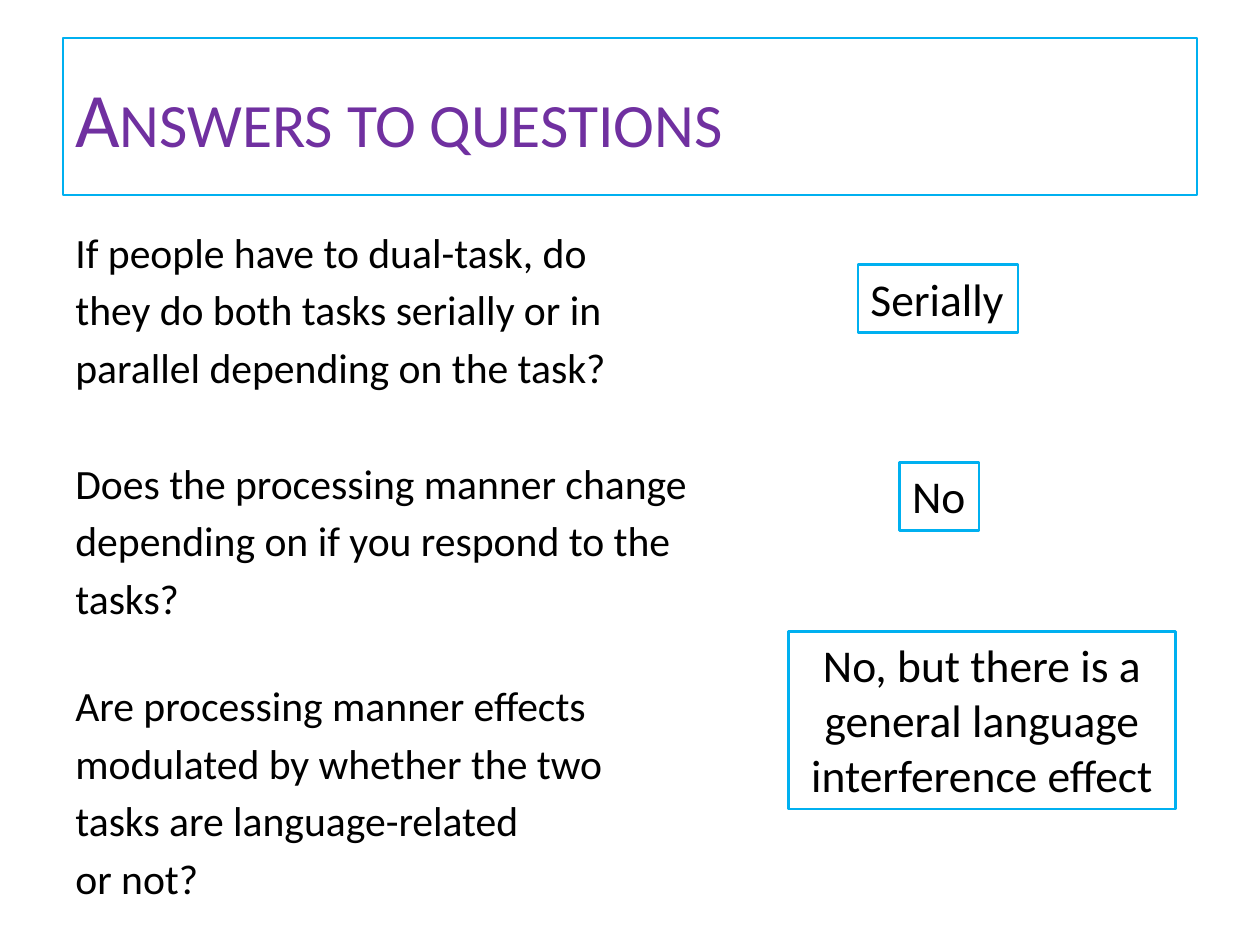
from dataclasses import dataclass

from pptx import Presentation
from pptx.dml.color import RGBColor
from pptx.enum.shapes import MSO_SHAPE
from pptx.enum.text import MSO_ANCHOR, MSO_AUTO_SIZE, PP_ALIGN
from pptx.util import Pt

COLORS = {"title": "7030A0", "text": "000000", "border": "00B0F0"}
FONT = "Calibri"
LINE_GAP = 4.3


@dataclass(frozen=True)
class Box:
    left: float
    top: float
    width: float
    height: float


@dataclass(frozen=True)
class Question:
    lines: tuple[str, ...]
    gap: float


@dataclass(frozen=True)
class Answer:
    text: str
    box: Box
    wrap: bool = False
    alignment: PP_ALIGN = PP_ALIGN.LEFT


TITLE_BOX = Box(36, 21.6, 648, 90)
QUESTIONS_BOX = Box(36, 126, 647.3, 356.4)

QUESTIONS = (
    Question((
        "If people have to dual-task, do",
        "they do both tasks serially or in",
        "parallel depending on the task?",
    ), LINE_GAP),
    Question((
        "Does the processing manner change",
        "depending on if you respond to the",
        "tasks?",
    ), 37.6),
    Question((
        "Are processing manner effects",
        "modulated by whether the two",
        "tasks are language-related",
        "or not?",
    ), 32.7),
)

ANSWERS = (
    Answer("Serially", Box(490.3, 151.2, 91.4, 38.9)),
    Answer("No", Box(514.1, 264.2, 45.4, 38.9)),
    Answer("No, but there is a general language interference effect",
           Box(450.7, 360.7, 221, 101.5), True, PP_ALIGN.CENTER),
)


def write_text(paragraph, text: str, *, size: float, color: str = "text",
               alignment: PP_ALIGN = PP_ALIGN.LEFT, space_before: float = 0,
               small_caps: bool = False) -> None:
    paragraph.alignment = alignment
    paragraph.space_before = Pt(space_before)
    run = paragraph.add_run()
    run.text = text
    run.font.name = FONT
    run.font.size = Pt(size)
    run.font.color.rgb = RGBColor.from_string(COLORS[color])
    if small_caps:
        run._r.get_or_add_rPr().set("cap", "small")


def add_frame(slide, box: Box, line_width: float):
    shape = slide.shapes.add_shape(
        MSO_SHAPE.RECTANGLE, Pt(box.left), Pt(box.top), Pt(box.width), Pt(box.height))
    shape.shadow.inherit = False
    shape.fill.background()
    shape.line.color.rgb = RGBColor.from_string(COLORS["border"])
    shape.line.width = Pt(line_width)
    shape.text_frame.word_wrap = True
    shape.text_frame.vertical_anchor = MSO_ANCHOR.MIDDLE
    return shape


def add_title(slide, text: str) -> None:
    shape = add_frame(slide, TITLE_BOX, 1)
    write_text(shape.text_frame.paragraphs[0], text, size=44, color="title", small_caps=True)


def add_questions(slide, questions: tuple[Question, ...]) -> None:
    box = QUESTIONS_BOX
    shape = slide.shapes.add_textbox(
        Pt(box.left), Pt(box.top), Pt(box.width), Pt(box.height))
    text_frame = shape.text_frame
    text_frame.word_wrap = True
    paragraph = text_frame.paragraphs[0]
    for question in questions:
        for index, line in enumerate(question.lines):
            if paragraph.runs:
                paragraph = text_frame.add_paragraph()
            gap = LINE_GAP if index else question.gap
            write_text(paragraph, line, size=23.8, space_before=gap)


def add_answer(slide, answer: Answer) -> None:
    text_frame = add_frame(slide, answer.box, 1.5).text_frame
    text_frame.word_wrap = answer.wrap
    text_frame.auto_size = MSO_AUTO_SIZE.SHAPE_TO_FIT_TEXT
    text_frame.vertical_anchor = MSO_ANCHOR.TOP
    write_text(text_frame.paragraphs[0], answer.text, size=26, alignment=answer.alignment)


def main() -> None:
    presentation = Presentation()
    presentation.slide_width = Pt(720)
    presentation.slide_height = Pt(540)
    slide = presentation.slides.add_slide(presentation.slide_layouts[6])
    add_title(slide, "Answers to questions")
    add_questions(slide, QUESTIONS)
    for answer in ANSWERS:
        add_answer(slide, answer)
    presentation.save("out.pptx")


if __name__ == "__main__":
    main()
